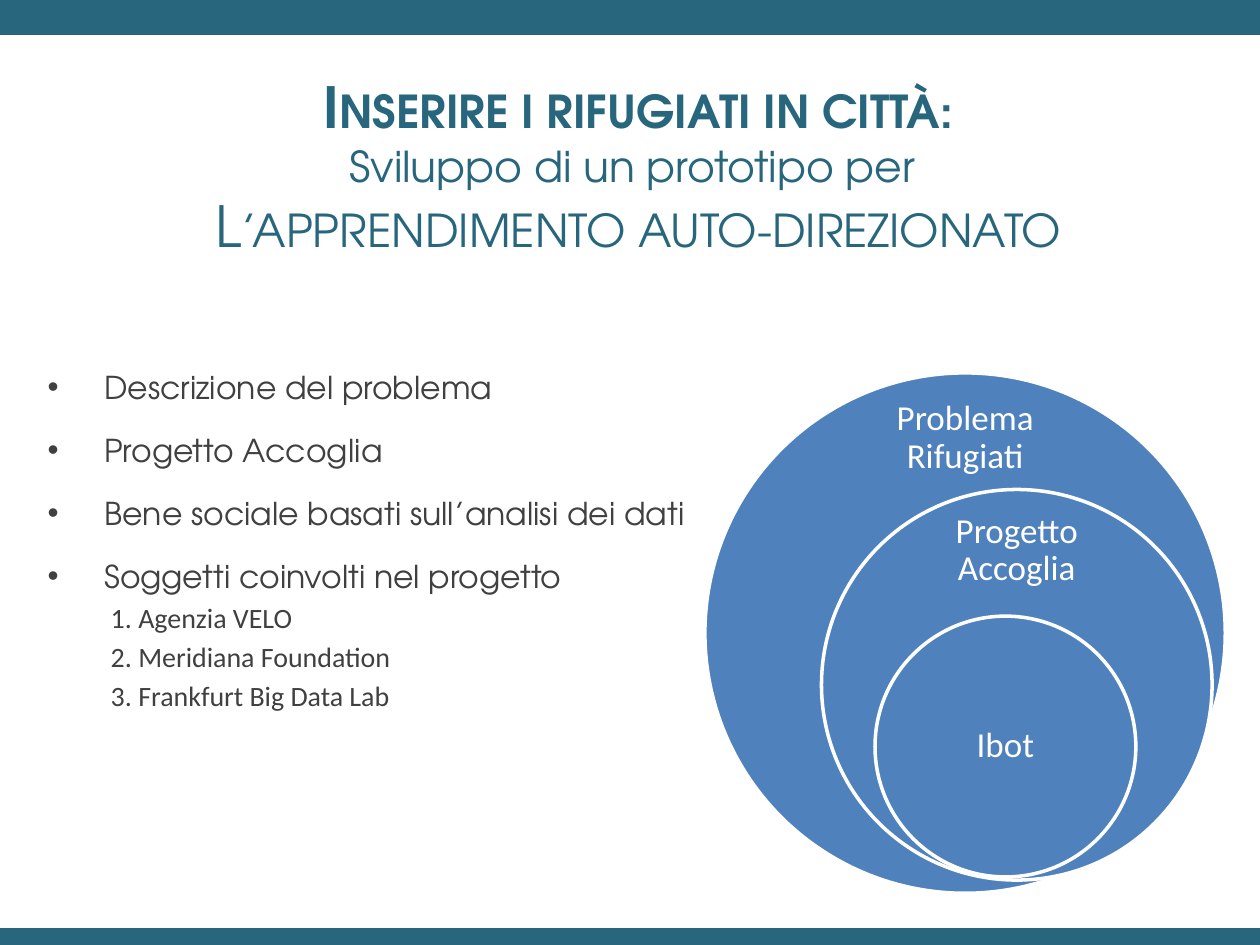
import pptx
import pptx.dml.color
import pptx.enum.shapes
import pptx.enum.text
import pptx.oxml.ns
import pptx.util
from lxml import etree

TEAL = pptx.dml.color.RGBColor(0x27, 0x66, 0x7C)
BLUE = pptx.dml.color.RGBColor(0x4F, 0x81, 0xBD)
GREY = pptx.dml.color.RGBColor(0x40, 0x40, 0x40)
WHITE = pptx.dml.color.RGBColor(0xFF, 0xFF, 0xFF)
DISPLAY_FONT = "TeX Gyre Adventor"
TEXT_FONT = "Calibri"
COLUMNS, ROWS = 100, 75

TITLE_LINES = [
    ("Inserire i rifugiati in città:", 32.4, True, True),
    ("Sviluppo di un prototipo per ", 24.3, False, False),
    ("L’apprendimento auto-direzionato", 32.4, False, True),
]
TOPICS = [
    "Descrizione del problema",
    "Progetto Accoglia",
    "Bene sociale basati sull’analisi dei dati",
    "Soggetti coinvolti nel progetto",
]
PARTNERS = ["Agenzia VELO", "Meridiana Foundation", "Frankfurt Big Data Lab"]
# label, circle centre column and row, diameter, label centre row
CIRCLES = [
    ("Problema Rifugiati", 76.6, 50.25, 41.3, 34.75),
    ("Progetto Accoglia", 80.7, 54.35, 31, 43.7),
    ("Ibot", 79.8, 59.25, 20.7, 59.25),
]


class SlideBuilder:
    """Draws on one slide; lengths are columns and rows of a 100 by 75 grid."""

    def __init__(self, presentation):
        self.column = presentation.slide_width / COLUMNS
        self.row = presentation.slide_height / ROWS
        self.slide = presentation.slides.add_slide(presentation.slide_layouts[6])

    def place(self, left, top, width, height):
        return (round(left * self.column), round(top * self.row),
                round(width * self.column), round(height * self.row))

    def shape(self, kind, box, fill, line, line_width):
        shape = self.slide.shapes.add_shape(kind, *self.place(*box))
        shape.shadow.inherit = False
        shape.fill.solid()
        shape.fill.fore_color.rgb = fill
        shape.line.color.rgb = line
        shape.line.width = pptx.util.Pt(line_width)

    def bar(self, top, height):
        self.shape(pptx.enum.shapes.MSO_SHAPE.RECTANGLE,
                   (0, top, COLUMNS, height), TEAL, TEAL, 0.75)

    def circle(self, centre_column, centre_row, diameter):
        box = (centre_column - diameter / 2, centre_row - diameter / 2, diameter, diameter)
        self.shape(pptx.enum.shapes.MSO_SHAPE.OVAL, box, BLUE, WHITE, 2)

    def text_frame(self, box, anchor):
        frame = self.slide.shapes.add_textbox(*self.place(*box)).text_frame
        frame.word_wrap = True
        frame.vertical_anchor = anchor
        return frame

    def run(self, paragraph, text, size, font, color, bold=False):
        run = paragraph.add_run()
        run.text = text
        run.font.size = pptx.util.Pt(size)
        run.font.name = font
        run.font.color.rgb = color
        run.font.bold = bold
        return run

    def title(self, box, lines):
        frame = self.text_frame(box, pptx.enum.text.MSO_ANCHOR.MIDDLE)
        paragraph = frame.paragraphs[0]
        paragraph.alignment = pptx.enum.text.PP_ALIGN.CENTER
        for index, (text, size, bold, small_caps) in enumerate(lines):
            if index:
                paragraph.add_line_break()
            run = self.run(paragraph, text, size, DISPLAY_FONT, TEAL, bold)
            if small_caps:
                run.font._element.set("cap", "small")

    def label(self, text, centre_column, centre_row):
        width, height = 11.4, 7
        frame = self.text_frame(
            (centre_column - width / 2, centre_row - height / 2, width, height),
            pptx.enum.text.MSO_ANCHOR.MIDDLE)
        frame.margin_left = frame.margin_right = 0
        frame.margin_top = frame.margin_bottom = 0
        paragraph = frame.paragraphs[0]
        paragraph.alignment = pptx.enum.text.PP_ALIGN.CENTER
        paragraph.line_spacing = 0.9
        self.run(paragraph, text, 20, TEXT_FONT, WHITE)

    def list_item(self, paragraph, margin, hanging, marker, attributes):
        """Turn a paragraph into a list item; margin and hanging are in columns."""
        properties = paragraph._p.get_or_add_pPr()
        properties.set("marL", str(round(margin * self.column)))
        properties.set("indent", str(round(-hanging * self.column)))
        if marker == "buChar":
            font = etree.SubElement(properties, pptx.oxml.ns.qn("a:buFont"))
            font.set("typeface", "Arial")
        bullet = etree.SubElement(properties, pptx.oxml.ns.qn("a:" + marker))
        for name, value in attributes.items():
            bullet.set(name, value)

    def agenda(self, box, topics, partners):
        frame = self.text_frame(box, pptx.enum.text.MSO_ANCHOR.TOP)
        for index, text in enumerate(topics + partners):
            paragraph = frame.add_paragraph() if index else frame.paragraphs[0]
            is_topic = index < len(topics)
            if is_topic:
                size, font = 18, DISPLAY_FONT
                self.list_item(paragraph, 4.5, 4.5, "buChar", {"char": "•"})
                paragraph.line_spacing = 1.5
            else:
                size, font = 16, TEXT_FONT
                self.list_item(paragraph, 7.2, 2.2, "buAutoNum", {"type": "arabicPeriod"})
            if index:
                paragraph.space_before = pptx.util.Pt(size * 0.2)
            self.run(paragraph, text, size, font, GREY)


def main():
    presentation = pptx.Presentation()
    presentation.slide_width = pptx.util.Inches(10)
    presentation.slide_height = pptx.util.Inches(7.5)

    builder = SlideBuilder(presentation)
    builder.bar(0, 2.7)
    builder.bar(73.7, 1.3)
    builder.title((12.2, 5.1, 76.9, 16.1), TITLE_LINES)
    builder.agenda((2.8, 27.2, 54, 45), TOPICS, PARTNERS)
    for text, column, row, diameter, label_row in CIRCLES:
        builder.circle(column, row, diameter)
        builder.label(text, column, label_row)

    presentation.save("out.pptx")


if __name__ == "__main__":
    main()
